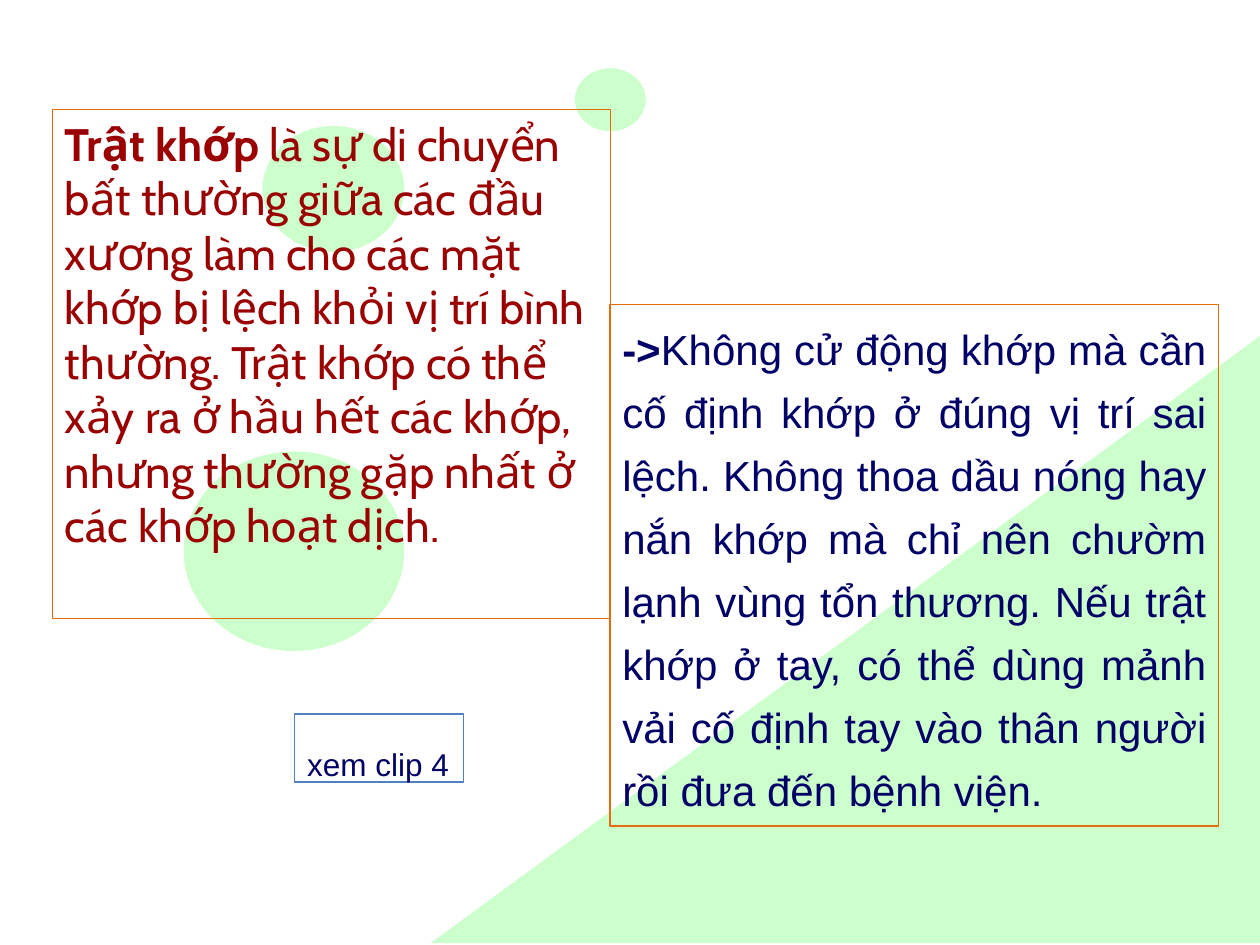
"""Build a slide on joint dislocation and its first aid."""
from pptx import Presentation
from pptx.dml.color import RGBColor
from pptx.enum.shapes import MSO_SHAPE
from pptx.enum.text import MSO_AUTO_SIZE, PP_ALIGN
from pptx.util import Pt

OVAL = MSO_SHAPE.OVAL
WEDGE = MSO_SHAPE.RIGHT_TRIANGLE
GROW = MSO_AUTO_SIZE.SHAPE_TO_FIT_TEXT
JUSTIFY = PP_ALIGN.JUSTIFY

COLORS = {
    "mint": "CCFFCC",
    "orange": "E46C0A",
    "blue": "4F81BD",
    "navy": "000066",
    "red": "9A0000",
}
CIRCLES = [
    (105, 258, 126, 114),
    (150, 72, 81, 72),
    (328.5, 39, 40.5, 36),
]
TERM = "Trật khớp "
MEANING = (
    "là sự di chuyển bất thường giữa các đầu xương làm cho các mặt khớp bị "
    "lệch khỏi vị trí bình thường. Trật khớp có thể xảy ra ở hầu hết các "
    "khớp, nhưng thường gặp nhất ở các khớp hoạt dịch."
)
ADVICE = (
    "Không cử động khớp mà cần cố định khớp ở đúng vị trí sai lệch. Không "
    "thoa dầu nóng hay nắn khớp mà chỉ nên chườm lạnh vùng tổn thương. Nếu "
    "trật khớp ở tay, có thể dùng mảnh vải cố định tay vào thân người rồi "
    "đưa đến bệnh viện."
)


def color(name):
    return RGBColor.from_string(COLORS[name])


def add_decor(slide, kind, area):
    shape = slide.shapes.add_shape(kind, *map(Pt, area))
    shape.shadow.inherit = False
    shape.fill.solid()
    shape.fill.fore_color.rgb = color("mint")
    shape.line.fill.background()
    return shape


def add_box(slide, area, parts, font, size, ink, edge, wrap=True, lead=None):
    box = slide.shapes.add_textbox(*map(Pt, area))
    box.line.color.rgb = color(edge)
    box.line.width = Pt(0.75)
    frame = box.text_frame
    frame.word_wrap = wrap
    frame.auto_size = GROW
    para = frame.paragraphs[0]
    if lead:
        para.alignment = JUSTIFY
        para.line_spacing = Pt(lead)
    for text, bold in parts:
        run = para.add_run()
        run.text = text
        run.font.name = font
        run.font.size = Pt(size)
        run.font.bold = bold
        run.font.color.rgb = color(ink)


def main():
    deck = Presentation()
    deck.slide_width, deck.slide_height = Pt(720), Pt(540)
    slide = deck.slides.add_slide(deck.slide_layouts[6])

    wedge = add_decor(slide, WEDGE, (246, 192, 474, 347))
    wedge.element.spPr.get_or_add_xfrm().set("flipH", "1")
    for area in CIRCLES:
        add_decor(slide, OVAL, area)

    add_box(slide, (348.5, 174, 348, 298), [("->", True), (ADVICE, False)],
            "Arial", 24, "navy", "orange", lead=36)
    add_box(slide, (30, 62.5, 319, 291), [(TERM, True), (MEANING, False)],
            "Cabin", 26, "red", "orange")
    add_box(slide, (168.5, 408, 96.5, 39), [("xem clip 4", False)],
            "Arial", 18, "navy", "blue", wrap=False, lead=36)
    deck.save("out.pptx")


if __name__ == "__main__":
    main()
